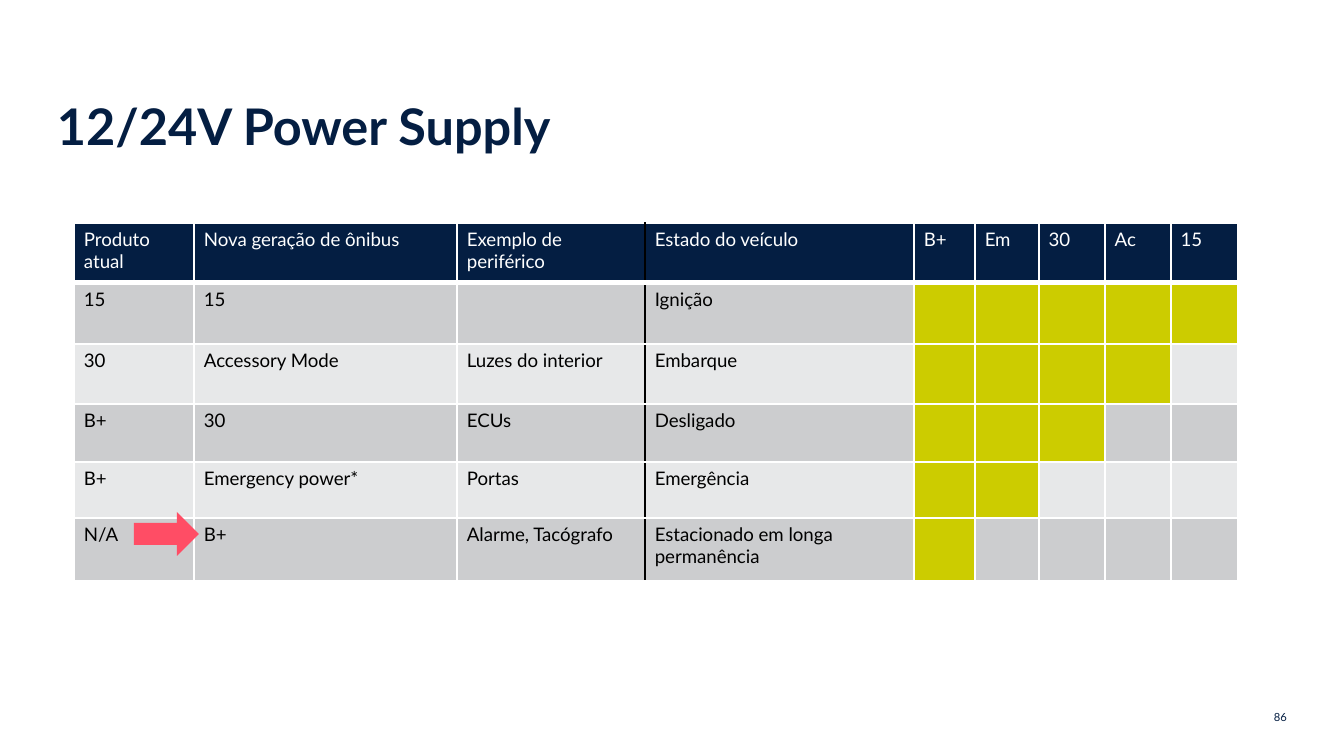
from lxml.etree import SubElement
from pptx import Presentation
from pptx.dml.color import RGBColor
from pptx.enum.shapes import MSO_SHAPE
from pptx.enum.text import MSO_ANCHOR, PP_ALIGN
from pptx.oxml.ns import qn
from pptx.util import Pt

PX = 914400 / 134.4
FONT = "Lato"
NAVY = RGBColor(0x04, 0x1E, 0x42)
WHITE = RGBColor(0xFF, 0xFF, 0xFF)
BLACK = RGBColor(0, 0, 0)
DARK_BAND = RGBColor(0xCC, 0xCD, 0xCF)
LIGHT_BAND = RGBColor(0xE7, 0xE8, 0xE9)
POWERED = RGBColor(0xCC, 0xCC, 0x00)
CORAL = RGBColor(0xFF, 0x4D, 0x65)

TITLE = "12/24V Power Supply"
PAGE_NUMBER = "86"
HEADER = ["Produto atual", "Nova geração de ônibus", "Exemplo de periférico",
          "Estado do veículo", "B+", "Em", "30", "Ac", "15"]
STATES = [
    (["15", "15", "", "Ignição"], 5),
    (["30", "Accessory Mode", "Luzes do interior", "Embarque"], 4),
    (["B+", "30", "ECUs", "Desligado"], 3),
    (["B+", "Emergency power*", "Portas", "Emergência"], 2),
    (["N/A", "B+", "Alarme, Tacógrafo", "Estacionado em longa permanência"], 1),
]
COLUMN_WIDTHS = [120, 263, 188, 269, 61, 64, 66, 66, 67]
ROW_HEIGHTS = [60, 61, 60, 58, 56, 63]
TABLE_LEFT, TABLE_TOP = 74, 223
FIRST_LINE_COLUMN = 4


def px(value):
    """Turn pixels into EMU."""
    return round(value * PX)


def style(paragraph, size, color, bold=False):
    """Set the font of a whole paragraph."""
    font = paragraph.font
    font.name, font.size, font.bold = FONT, Pt(size), bold
    font.color.rgb = color


def add_label(slide, box, text, size, anchor, bold=False):
    """Add a navy text box without insets and return its paragraph."""
    frame = slide.shapes.add_textbox(*map(px, box)).text_frame
    frame.word_wrap = True
    frame.vertical_anchor = anchor
    frame.margin_left = frame.margin_top = frame.margin_right = frame.margin_bottom = 0
    paragraph = frame.paragraphs[0]
    paragraph.text = text
    style(paragraph, size, NAVY, bold)
    return paragraph


def set_borders(cell, row, column):
    """Rule the cell in white, with black between the two halves of the table."""
    properties = cell._tc.get_or_add_tcPr()
    black_side = {2: "R", 3: "L"}.get(column)
    for index, side in enumerate("LRTB"):
        width = 3 if row == 0 and side == "B" else 1
        line = SubElement(properties, qn(f"a:ln{side}"), w=str(Pt(width)))
        fill = SubElement(line, qn("a:solidFill"))
        color = BLACK if side == black_side else WHITE
        SubElement(fill, qn("a:srgbClr"), val=str(color))
        properties.insert(index, line)


def cell_fill(row, column):
    """Choose the fill from the band and the lines powered in that state."""
    if row == 0:
        return NAVY
    if 0 <= column - FIRST_LINE_COLUMN < STATES[row - 1][1]:
        return POWERED
    return DARK_BAND if row % 2 else LIGHT_BAND


def add_power_table(slide):
    """Add the table of vehicle states and supply lines."""
    rows = [HEADER] + [texts + [""] * 5 for texts, _ in STATES]
    table = slide.shapes.add_table(
        len(rows), len(HEADER), px(TABLE_LEFT), px(TABLE_TOP),
        px(sum(COLUMN_WIDTHS)), px(sum(ROW_HEIGHTS))).table
    for column, width in zip(table.columns, COLUMN_WIDTHS):
        column.width = px(width)
    for row, height in zip(table.rows, ROW_HEIGHTS):
        row.height = px(height)
    for r, texts in enumerate(rows):
        for c, text in enumerate(texts):
            cell = table.cell(r, c)
            cell.text = text
            cell.margin_left = cell.margin_right = px(10)
            cell.margin_top = cell.margin_bottom = px(5)
            cell.fill.solid()
            cell.fill.fore_color.rgb = cell_fill(r, c)
            style(cell.text_frame.paragraphs[0], 10, BLACK if r else WHITE)
            set_borders(cell, r, c)


def main():
    """Build the power supply slide."""
    presentation = Presentation()
    presentation.slide_width, presentation.slide_height = px(1344), px(756)
    slide = presentation.slides.add_slide(presentation.slide_layouts[6])
    title = add_label(slide, (57, 40, 1167, 116), TITLE, 27, MSO_ANCHOR.BOTTOM, True)
    title.line_spacing = 0.9
    number = add_label(slide, (1231, 705, 56, 24), PAGE_NUMBER, 6, MSO_ANCHOR.MIDDLE)
    number.alignment = PP_ALIGN.RIGHT
    add_power_table(slide)
    arrow = slide.shapes.add_shape(MSO_SHAPE.RIGHT_ARROW, *map(px, (134, 512, 65, 44)))
    arrow.shadow.inherit = False
    arrow.fill.solid()
    arrow.fill.fore_color.rgb = CORAL
    arrow.line.fill.background()
    presentation.save("out.pptx")


if __name__ == "__main__":
    main()
